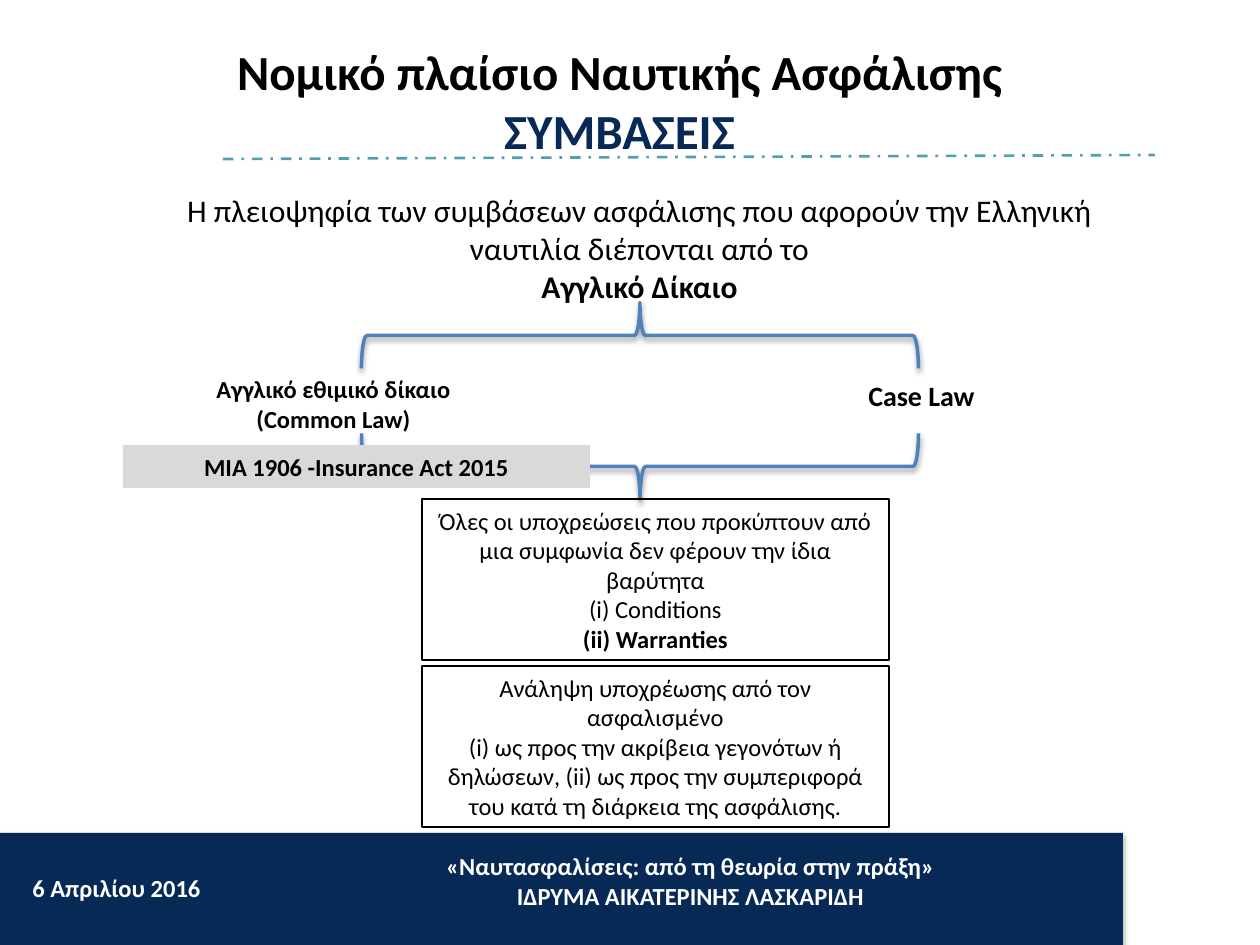
import pptx
import pptx.util
import pptx.dml.color
import pptx.enum.dml
import pptx.enum.shapes
import pptx.enum.text
import pptx.oxml
import pptx.oxml.ns

# Content: each box is a list of paragraphs
TITLE = ["Νομικό πλαίσιο Ναυτικής Ασφάλισης", "ΣΥΜΒΑΣΕΙΣ"]
INTRO = [
    "Η πλειοψηφία των συμβάσεων ασφάλισης που αφορούν την Ελληνική ναυτιλία διέπονται από το",
    "Aγγλικό Δίκαιο",
]
SOURCES = [
    # paragraphs, place, size
    (["Αγγλικό εθιμικό δίκαιο", "(Common Law)"], (183, 368, 301, 72), 14),
    (["Case Law"], (814, 372, 215, 81), 16),
]
STATUTES = ["MIA 1906 -Insurance Act 2015"]
DUTIES = [
    # paragraphs, bold flags
    (["Όλες οι υποχρεώσεις που προκύπτουν από μια συμφωνία δεν φέρουν την ίδια βαρύτητα",
      "(i) Conditions", "(ii) Warranties"], [False, False, True]),
    (["Ανάληψη υποχρέωσης από τον ασφαλισμένο",
      "(i) ως προς την ακρίβεια γεγονότων ή δηλώσεων, (ii) ως προς την συμπεριφορά "
      "του κατά τη διάρκεια της ασφάλισης."], [False, False]),
]
DATE = ["6 Aπριλίου 2016"]
EVENT = ["«Ναυτασφαλίσεις: από τη θεωρία στην πράξη»", "ΙΔΡΥΜΑ ΑΙΚΑΤΕΡΙΝΗΣ ΛΑΣΚΑΡΙΔΗ"]

COLOURS = {"navy": "072956", "teal": "50A0B0", "blue": "4F81BD",
           "grey": "D9D9D9", "black": "000000", "white": "FFFFFF"}
FONT = "Calibri"
PX = 914400 / 126
SHAPES = pptx.enum.shapes.MSO_SHAPE
ALIGN = pptx.enum.text.PP_ALIGN


def px(*lengths):
    return [pptx.util.Emu(round(length * PX)) for length in lengths]


def colour(name):
    return pptx.dml.color.RGBColor.from_string(COLOURS[name])


def write(shape, paragraphs, size=14, bold=True, ink="black", align=ALIGN.CENTER,
          anchor=pptx.enum.text.MSO_ANCHOR.TOP):
    """Fill a shape with text; bold and ink may be one value or one per paragraph."""
    bolds = bold if isinstance(bold, list) else [bold] * len(paragraphs)
    inks = ink if isinstance(ink, list) else [ink] * len(paragraphs)
    frame = shape.text_frame
    frame.word_wrap = True
    frame.auto_size = pptx.enum.text.MSO_AUTO_SIZE.NONE
    frame.vertical_anchor = anchor
    for index, text in enumerate(paragraphs):
        para = frame.add_paragraph() if index else frame.paragraphs[0]
        para.alignment = align
        para.space_before = pptx.util.Pt(0)
        span = para.add_run()
        span.text = text
        span.font.name = FONT
        span.font.size = pptx.util.Pt(size)
        span.font.bold = bolds[index]
        span.font.color.rgb = colour(inks[index])


def place(shape, left, top, width, height):
    shape.left, shape.top, shape.width, shape.height = px(left, top, width, height)


def add_shape(kind, spot, fill=None, line=None, weight=0.75):
    shape = page.shapes.add_shape(kind, *px(*spot))
    shape.shadow.inherit = False
    if fill:
        shape.fill.solid()
        shape.fill.fore_color.rgb = colour(fill)
    else:
        shape.fill.background()
    if line:
        shape.line.color.rgb = colour(line)
        shape.line.width = pptx.util.Pt(weight)
    else:
        shape.line.fill.background()
    return shape


def cast_shadow(shape, distance, opacity):
    effects = shape._element.spPr.find(pptx.oxml.ns.qn("a:effectLst"))
    effects.append(pptx.oxml.parse_xml(
        f'<a:outerShdw {pptx.oxml.ns.nsdecls("a")} blurRad="{round(3.1 * 12700)}" '
        f'dist="{round(distance * 12700)}" dir="5400000" rotWithShape="0">'
        f'<a:srgbClr val="{COLOURS["black"]}"><a:alpha val="{opacity * 1000}"/></a:srgbClr>'
        '</a:outerShdw>'))


def add_text(paragraphs, spot, **look):
    write(page.shapes.add_textbox(*px(*spot)), paragraphs, **look)


deck = pptx.Presentation()
deck.slide_width, deck.slide_height = px(1260, 945)
page = deck.slides.add_slide(deck.slide_layouts[1])

# Footer band and rule under the title
band = add_shape(SHAPES.RECTANGLE, (0, 833, 1123, 112), fill="navy")
cast_shadow(band, 1.8, 35)
rule = page.shapes.add_connector(pptx.enum.shapes.MSO_CONNECTOR.STRAIGHT,
                                 *px(223, 159, 1155, 155))
rule.line.color.rgb = colour("teal")
rule.line.width = pptx.util.Pt(1.5)
rule.line.dash_style = pptx.enum.dml.MSO_LINE.DASH_DOT
rule._element.spPr.append(pptx.oxml.parse_xml(
    f'<a:effectLst {pptx.oxml.ns.nsdecls("a")}/>'))
add_text(DATE, (20, 867, 253, 43), ink="white", align=ALIGN.LEFT)
add_text(EVENT, (364, 845, 653, 72), ink="white")

# Title and introduction
title, body = page.shapes.title, page.placeholders[1]
place(title, 123, 35, 993, 129)
write(title, TITLE, size=28, ink=["black", "navy"])
place(body, 123, 185, 1033, 165)
for _ in INTRO[1:]:
    body.text_frame.add_paragraph()
for para in body.text_frame.paragraphs[1:]:
    para._p.getparent().remove(para._p)
write(body, INTRO, size=18, bold=[False, True])
for para in body.text_frame.paragraphs:
    properties = para._p.get_or_add_pPr()
    properties.set("marL", "0")
    properties.set("indent", "0")
    properties.append(pptx.oxml.parse_xml(f'<a:buNone {pptx.oxml.ns.nsdecls("a")}/>'))

# Braces that split the law into its sources and join them again
for top, turn in ((57, 270), (188, 90)):
    brace = add_shape(SHAPES.RIGHT_BRACE, (607, top, 66, 557), line="blue", weight=2)
    brace.rotation = turn
    cast_shadow(brace, 1.6, 38)

for paragraphs, spot, size in SOURCES:
    add_text(paragraphs, spot, size=size)

# Statutes and the boxes on duties
MIDDLE = pptx.enum.text.MSO_ANCHOR.MIDDLE
statutes = add_shape(SHAPES.RECTANGLE, (123, 445, 467, 43), fill="grey")
write(statutes, STATUTES, anchor=MIDDLE)
for row, (paragraphs, bolds) in enumerate(DUTIES):
    box = add_shape(SHAPES.RECTANGLE, (422, 499 + row * 167, 467, 161), line="black")
    write(box, paragraphs, bold=bolds, anchor=MIDDLE)

deck.save("out.pptx")
